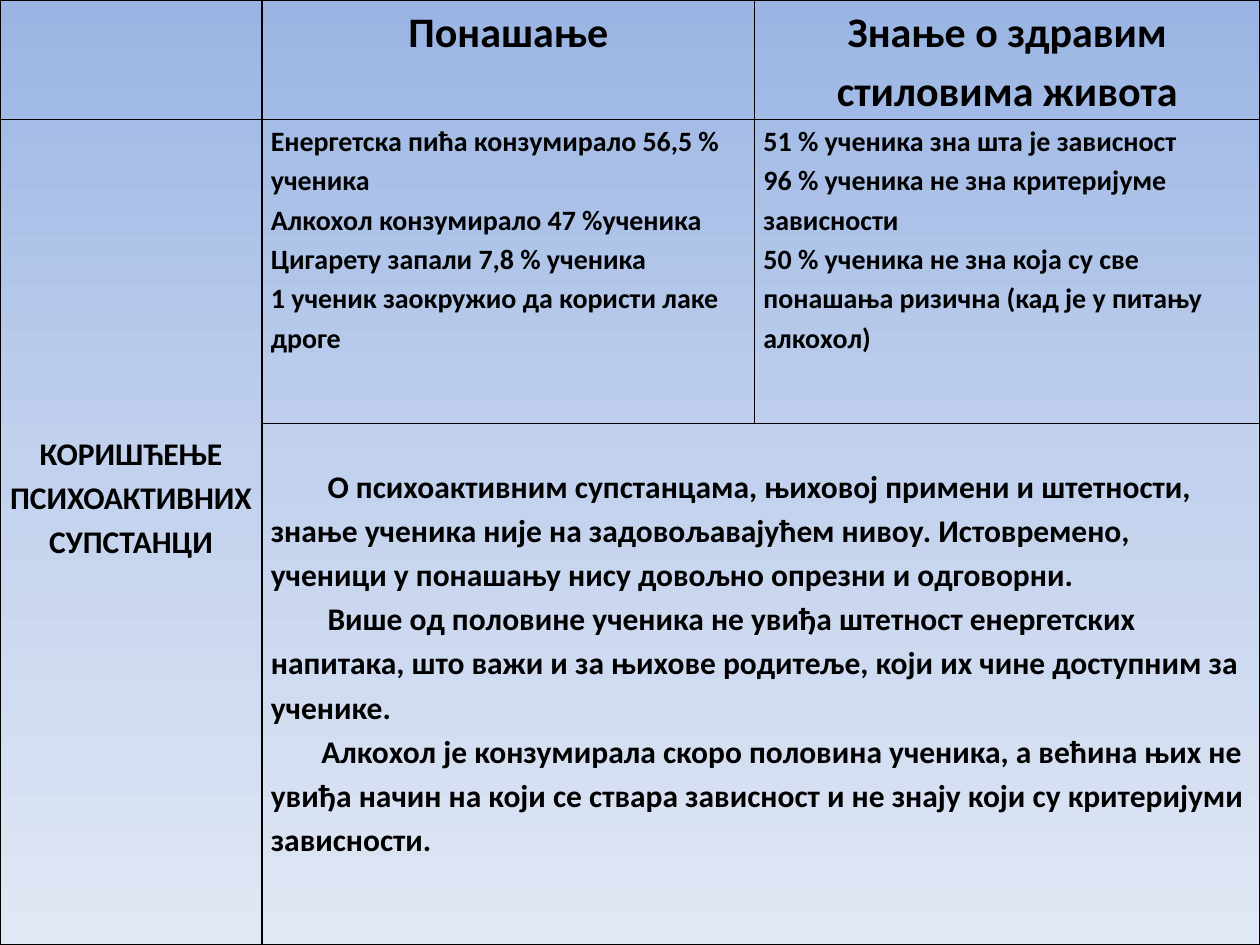
from copy import deepcopy

from lxml import etree
from pptx import Presentation
from pptx.dml.color import RGBColor
from pptx.enum import text
from pptx.oxml.ns import qn
from pptx.util import Inches, Pt

BLACK = RGBColor(0x00, 0x00, 0x00)
BACKGROUND = [
    (0, RGBColor(0x9A, 0xB5, 0xE4)),
    (0.5, RGBColor(0xC2, 0xD1, 0xED)),
    (1, RGBColor(0xE1, 0xE8, 0xF5)),
]
COLUMNS = [2.08, 3.91, 4.01]
ROWS = [0.95, 2.41, 4.14]
BEHAVIOUR = [
    "Енергетска пића конзумирало 56,5 % ученика",
    "Алкохол конзумирало 47 %ученика",
    "Цигарету запали 7,8 % ученика",
    "1 ученик заокружио да користи лаке дроге",
]
KNOWLEDGE = [
    "51 % ученика зна шта је зависност",
    "96 % ученика не зна критеријуме зависности",
    "50 % ученика не зна која су све понашања ризична (кад је у питању алкохол)",
]
CONCLUSIONS = [
    "О психоактивним супстанцама, њиховој примени и штетности, знање ученика није на "
    "задовољавајућем нивоу. Истовремено, ученици у понашању нису довољно опрезни и одговорни.",
    "Више од половине ученика не увиђа штетност енергетских напитака, што важи и за њихове "
    "родитеље, који их чине доступним за ученике.",
    "Алкохол је конзумирала скоро половина ученика, а већина њих не увиђа начин на који се "
    "ствара зависност и не знају који су критеријуми зависности.",
]


class SlideBuilder:
    """Holds the style and the current slide."""

    font = "Calibri"
    line_spacing = 1.15
    side_margin = Inches(0.07)

    def __init__(self, page):
        self.page = page

    def background(self, stops):
        fill = self.page.background.fill
        fill.gradient()
        fill.gradient_angle = 270
        stop_list = next(self.page.element.iter(qn("a:gsLst")))
        stop_list.append(deepcopy(stop_list[-1]))
        for stop, (position, color) in zip(fill.gradient_stops, stops):
            stop.position = position
            stop.color.rgb = color

    def table(self, columns, rows):
        frame = self.page.shapes.add_table(
            len(rows), len(columns), 0, 0, Inches(sum(columns)), Inches(sum(rows)))
        table = frame.table
        table.first_row = table.horz_banding = False
        for column, width in zip(table.columns, columns):
            column.width = Inches(width)
        for row, height in zip(table.rows, rows):
            row.height = Inches(height)
        for cell in table.iter_cells():
            cell.margin_left = cell.margin_right = self.side_margin
            cell.margin_top = cell.margin_bottom = 0
            cell.fill.background()
            self.borders(cell)
        return table

    def borders(self, cell):
        properties = cell._tc.get_or_add_tcPr()
        for index, side in enumerate(["a:lnL", "a:lnR", "a:lnT", "a:lnB"]):
            line = etree.Element(qn(side), w=str(Pt(1)))
            fill = etree.SubElement(line, qn("a:solidFill"))
            etree.SubElement(fill, qn("a:srgbClr"), val=str(BLACK))
            properties.insert(index, line)

    def cell_text(self, cell, lines, size, align=text.PP_ALIGN.LEFT, top=0, indents=()):
        cell.margin_top = Inches(top)
        cell.text_frame.text = "\n".join(lines)
        for para in cell.text_frame.paragraphs:
            para.alignment = align
            para.line_spacing = self.line_spacing
            for span in para.runs:
                span.font.name = self.font
                span.font.size = Pt(size)
                span.font.bold = True
                span.font.color.rgb = BLACK
        for para, indent in zip(cell.text_frame.paragraphs, indents):
            properties = para._p.get_or_add_pPr()
            properties.set("marL", "0")
            properties.set("indent", str(Inches(indent)))


def main():
    deck = Presentation()
    deck.slide_width, deck.slide_height = Inches(10), Inches(7.5)
    builder = SlideBuilder(deck.slides.add_slide(deck.slide_layouts[6]))
    builder.background(BACKGROUND)

    table = builder.table(COLUMNS, ROWS)
    table.cell(1, 0).merge(table.cell(2, 0))
    table.cell(2, 1).merge(table.cell(2, 2))

    center = text.PP_ALIGN.CENTER
    for column, heading in enumerate(["Понашање", "Знање о здравим стиловима живота"], 1):
        builder.cell_text(table.cell(0, column), [heading], 24, center)
    builder.cell_text(
        table.cell(1, 0), ["КОРИШЋЕЊЕ ПСИХОАКТИВНИХ СУПСТАНЦИ"], 18, center, top=2.46)
    for column, findings in enumerate([BEHAVIOUR, KNOWLEDGE], 1):
        builder.cell_text(table.cell(1, column), findings, 16)
    builder.cell_text(table.cell(2, 1), CONCLUSIONS, 18, top=0.31, indents=[0.45, 0.45, 0.4])

    deck.save("out.pptx")


if __name__ == "__main__":
    main()
